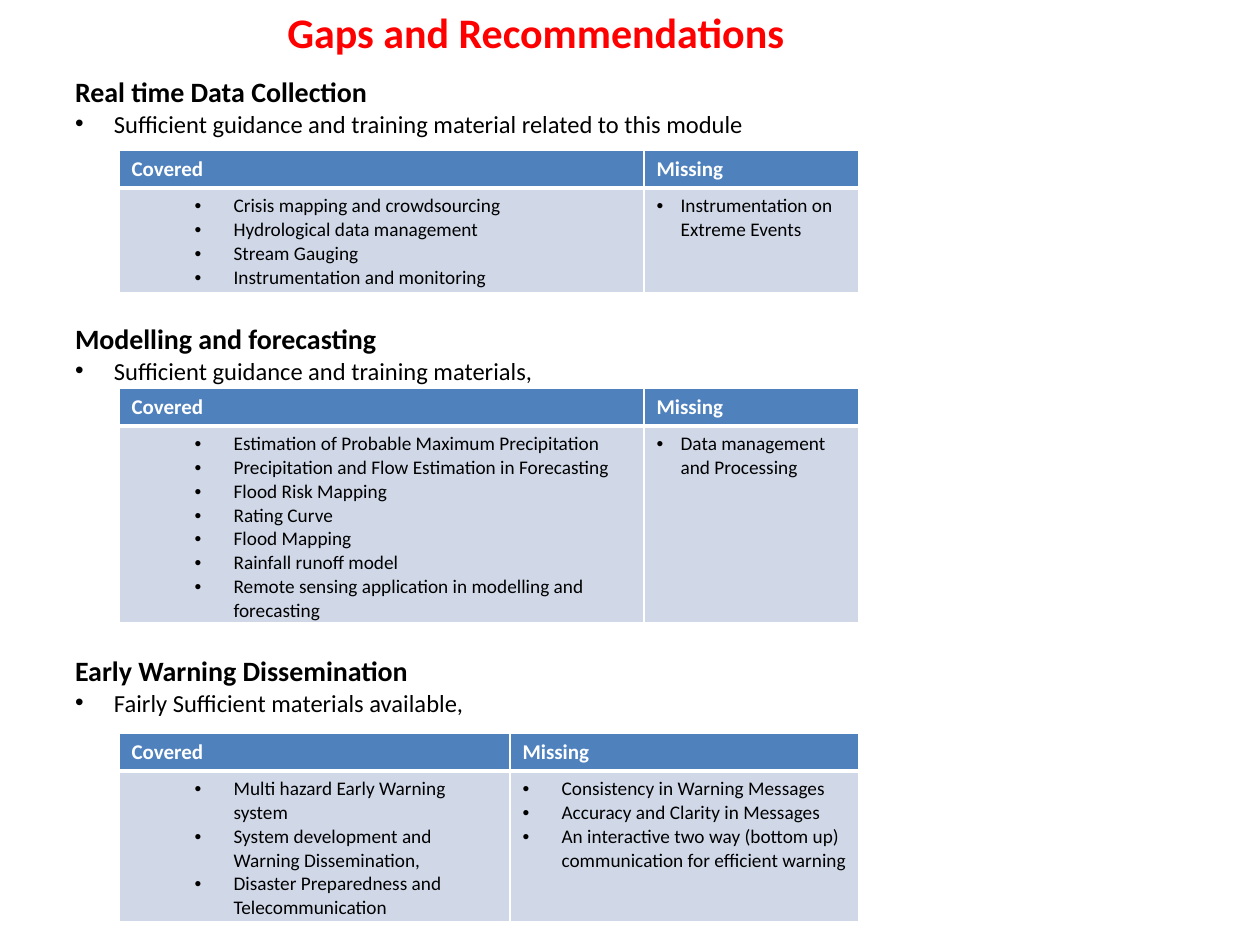
from pptx import Presentation, util as u
from pptx.dml.color import RGBColor
from pptx.enum import text
from pptx.oxml import parse_xml
from pptx.oxml.ns import nsdecls

SCALE = 914400 / 126  # EMU per px
THEME = {
    "font": "Calibri",
    "title": (24, "FF0000", True),
    "heading": (16, "000000", True),
    "lead": (14, "000000", False),
    "header": (12, "FFFFFF", True),
    "item": (11, "000000", False),
    "header_fill": "4F81BD",
    "body_fill": "D0D8E8",
    "border": "FFFFFF",
}
SECTIONS = [
    {
        "heading": "Real time Data Collection",
        "lead": "Sufficient guidance and training material related to this module",
        "top": 75, "table_top": 150, "columns": [525, 215], "body_height": 105,
        "covered": ["Crisis mapping and crowdsourcing", "Hydrological data management",
                    "Stream Gauging", "Instrumentation and monitoring"],
        "missing": ["Instrumentation on Extreme Events"], "missing_indent": 24,
    },
    {
        "heading": "Modelling and forecasting",
        "lead": "Sufficient guidance and training materials,",
        "top": 322, "table_top": 388, "columns": [525, 215], "body_height": 197,
        "covered": ["Estimation of Probable Maximum Precipitation",
                    "Precipitation and Flow Estimation in Forecasting",
                    "Flood Risk Mapping", "Rating Curve", "Flood Mapping",
                    "Rainfall runoff model",
                    "Remote sensing application in modelling and forecasting"],
        "missing": ["Data management and Processing"], "missing_indent": 24,
    },
    {
        "heading": "Early Warning Dissemination",
        "lead": "Fairly Sufficient materials available,",
        "top": 654, "table_top": 733, "columns": [391, 349], "body_height": 151,
        "covered": ["Multi hazard Early Warning system",
                    "System development and Warning Dissemination,",
                    "Disaster Preparedness and Telecommunication"],
        "missing": ["Consistency in Warning Messages", "Accuracy and Clarity in Messages",
                    "An interactive two way (bottom up) communication for efficient warning"],
        "missing_indent": 39,
    },
]


def px(length):
    return u.Emu(round(length * SCALE))


def write(frame, lines):
    """Fill a text frame from (wording, style, left margin, hanging indent) lines."""
    frame.word_wrap = True
    for index, (wording, style, margin, hanging) in enumerate(lines):
        paragraph = frame.paragraphs[0] if index == 0 else frame.add_paragraph()
        paragraph.text = wording
        paragraph.alignment = text.PP_ALIGN.LEFT
        if hanging:
            properties = paragraph._p.get_or_add_pPr()
            properties.set("marL", str(px(margin)))
            properties.set("indent", str(-px(hanging)))
            properties.append(parse_xml(f'<a:buFont {nsdecls("a")} typeface="Arial"/>'))
            properties.append(parse_xml(f'<a:buChar {nsdecls("a")} char="•"/>'))
        size, color, bold = THEME[style]
        paragraph.font.name = THEME["font"]
        paragraph.font.size = u.Pt(size)
        paragraph.font.bold = bold
        paragraph.font.color.rgb = RGBColor.from_string(color)


presentation = Presentation()
presentation.slide_width, presentation.slide_height = px(1260), px(945)
slide = presentation.slides.add_slide(presentation.slide_layouts[6])

title = slide.shapes.add_textbox(px(275), 0, px(556), px(63))
write(title.text_frame, [("Gaps and Recommendations", "title", 0, 0)])

for section in SECTIONS:
    intro = slide.shapes.add_textbox(px(75), px(section["top"]), px(800), px(64))
    frame = intro.text_frame
    frame.margin_left = frame.margin_right = frame.margin_top = frame.margin_bottom = 0
    write(frame, [(section["heading"], "heading", 0, 0), (section["lead"], "lead", 39, 39)])

    row_heights = [38, section["body_height"]]
    table = slide.shapes.add_table(
        2, 2, px(119), px(section["table_top"]),
        px(sum(section["columns"])), px(sum(row_heights))).table
    for row, height in zip(table.rows, row_heights):
        row.height = px(height)
    for column, width in zip(table.columns, section["columns"]):
        column.width = px(width)

    indent = section["missing_indent"]
    contents = [
        [[("Covered", "header", 0, 0)], [("Missing", "header", 0, 0)]],
        [[(item, "item", 102, 39) for item in section["covered"]],
         [(item, "item", indent, indent) for item in section["missing"]]],
    ]
    for row_index, row_contents in enumerate(contents):
        for column_index, lines in enumerate(row_contents):
            cell = table.cell(row_index, column_index)
            write(cell.text_frame, lines)
            if row_index == 1:
                cell.margin_bottom = 0
            properties = cell._tc.get_or_add_tcPr()
            thick_side = "B" if row_index == 0 else "T"
            for side in "LRTB":
                width = u.Pt(3 if side == thick_side else 1)
                properties.append(parse_xml(
                    f'<a:ln{side} {nsdecls("a")} w="{width}"><a:solidFill>'
                    f'<a:srgbClr val="{THEME["border"]}"/></a:solidFill></a:ln{side}>'))
            cell.fill.solid()
            fill = THEME["header_fill" if row_index == 0 else "body_fill"]
            cell.fill.fore_color.rgb = RGBColor.from_string(fill)

presentation.save("out.pptx")
